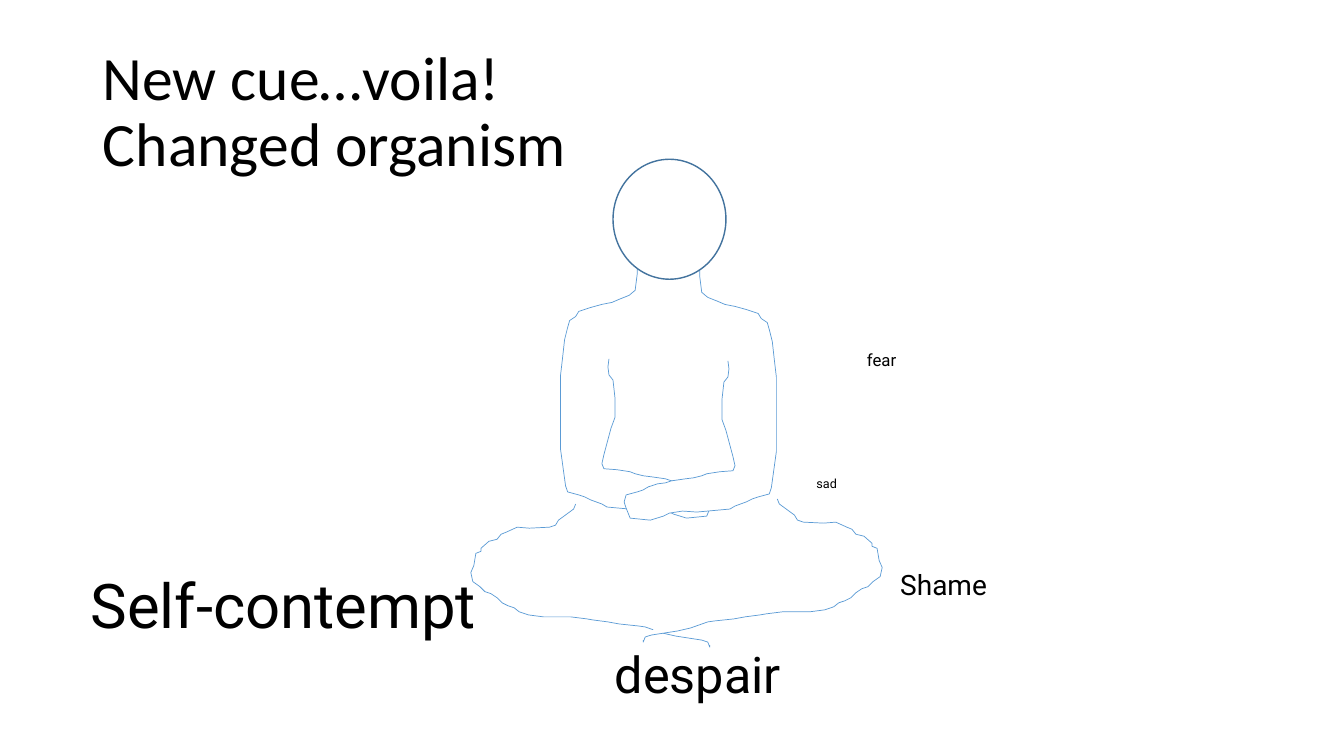
from pptx import Presentation
from pptx.dml.color import RGBColor
from pptx.enum.shapes import MSO_SHAPE
from pptx.enum.text import MSO_ANCHOR, MSO_AUTO_SIZE, PP_ALIGN
from pptx.util import Inches, Pt

BLACK = RGBColor(0x00, 0x00, 0x00)
WHITE = RGBColor(0xFF, 0xFF, 0xFF)
LIGHT_BLUE = RGBColor(0x5B, 0x9B, 0xD5)
DARK_BLUE = RGBColor(0x43, 0x73, 0x9E)
OVAL = MSO_SHAPE.OVAL
LEFT = PP_ALIGN.LEFT
MIDDLE = MSO_ANCHOR.MIDDLE
GROW = MSO_AUTO_SIZE.SHAPE_TO_FIT_TEXT

LEG = [
    (5.71, 5), (5.69, 5.05), (5.54, 5.16), (5.51, 5.21), (5.45, 5.23),
    (5.25, 5.24), (5.13, 5.23), (5.02, 5.28), (4.97, 5.3), (4.93, 5.35),
    (4.85, 5.37), (4.77, 5.44), (4.77, 5.47), (4.72, 5.49), (4.7, 5.61),
    (4.67, 5.68), (4.69, 5.77), (4.76, 5.82), (4.81, 5.87), (4.87, 5.89),
    (4.93, 5.93), (4.98, 5.98), (5.04, 6.01), (5.1, 6.03), (5.15, 6.07),
    (5.24, 6.1), (5.39, 6.12), (5.66, 6.12), (5.82, 6.14), (5.88, 6.15),
    (6.03, 6.17), (6.14, 6.19), (6.33, 6.21), (6.4, 6.22), (6.57, 6.28),
    (6.7, 6.31), (6.96, 6.35), (7.02, 6.37), (7.04, 6.42), (7.04, 6.4),
]
ARM = [
    (6.32, 2.55), (6.32, 2.72), (6.3, 2.88), (6.24, 2.93), (6.14, 2.97),
    (6.07, 3), (5.97, 3.02), (5.86, 3.05), (5.8, 3.07), (5.74, 3.09),
    (5.71, 3.14), (5.65, 3.18), (5.63, 3.25), (5.6, 3.37), (5.58, 3.55),
    (5.56, 3.72), (5.56, 4.16), (5.56, 4.46), (5.6, 4.75), (5.61, 4.82),
    (5.63, 4.88), (5.74, 4.91), (5.8, 4.93), (5.86, 4.96), (5.97, 5),
    (6.02, 5.03), (6.35, 5.06), (6.49, 5.05), (6.62, 5.07), (6.68, 5.1),
    (6.81, 5.14), (7.01, 5.12), (7.05, 5.02), (7.07, 4.96), (7.05, 4.89),
    (6.94, 4.86), (6.88, 4.84), (6.83, 4.81), (6.74, 4.78), (6.66, 4.77),
    (6.6, 4.75), (6.46, 4.73), (6.38, 4.72), (6.3, 4.7), (6.25, 4.68),
    (6.12, 4.66), (5.99, 4.65), (5.97, 4.6), (5.99, 4.51), (6.06, 4.25),
    (6.1, 4.14), (6.1, 3.95), (6.08, 3.77), (6.04, 3.72), (6.03, 3.64),
    (6.04, 3.56),
]


def add_span(para, text, font, size):
    span = para.add_run()
    span.text = text
    span.font.name = font
    span.font.size = Pt(size)
    span.font.color.rgb = BLACK


def paint(shape, line_color, line_width):
    shape.shadow.inherit = False
    shape.fill.solid()
    shape.fill.fore_color.rgb = WHITE
    shape.line.color.rgb = line_color
    shape.line.width = Pt(line_width)


deck = Presentation()
deck.slide_width = Inches(13.33)
deck.slide_height = Inches(7.5)
page = deck.slides.add_slide(deck.slide_layouts[5])

title = page.shapes.title
title.left, title.top = Inches(0.92), Inches(0.4)
title.width, title.height = Inches(11.5), Inches(1.45)
title.text_frame.vertical_anchor = MIDDLE
title.text_frame.word_wrap = True
para = title.text_frame.paragraphs[0]
para.alignment = LEFT
para.line_spacing = 0.9
add_span(para, "New cue…voila! ", "Calibri", 44)
para.add_line_break()
add_span(para, "Changed organism", "Calibri", 44)

feelings = [
    ("Shame", 20, 8.83, 5.58, 1.83, 0.43),
    ("fear", 12, 8.5, 3.42, 1.83, 0.3),
    ("Self-contempt", 44, 0.8, 5.58, 4.11, 0.84),
    ("despair", 36, 6, 6.33, 2.58, 0.7),
    ("sad", 9, 8, 4.67, 1.83, 0.25),
]
for feeling, size, *place in feelings:
    box = page.shapes.add_textbox(*map(Inches, place))
    box.text_frame.word_wrap = True
    box.text_frame.auto_size = GROW
    add_span(box.text_frame.paragraphs[0], feeling, "Roboto", size)

# Each limb is drawn, then mirrored: x becomes mirror_sum - x, y moves by drop.
body = page.shapes.add_group_shape()
for limb, mirror_sum, drop in [(LEG, 13.42, -0.05), (ARM, 13.26, 0.02)]:
    mirrored = [(mirror_sum - x, y + drop) for x, y in limb]
    for outline in (limb, mirrored):
        points = [(Inches(x), Inches(y)) for x, y in outline]
        builder = body.shapes.build_freeform(*points[0])
        builder.add_line_segments(points[1:], close=False)
        paint(builder.convert_to_shape(), LIGHT_BLUE, 0.5)

head = body.shapes.add_shape(OVAL, Inches(6.08), Inches(1.58), Inches(1.12), Inches(1.19))
paint(head, DARK_BLUE, 1)

deck.save("out.pptx")
